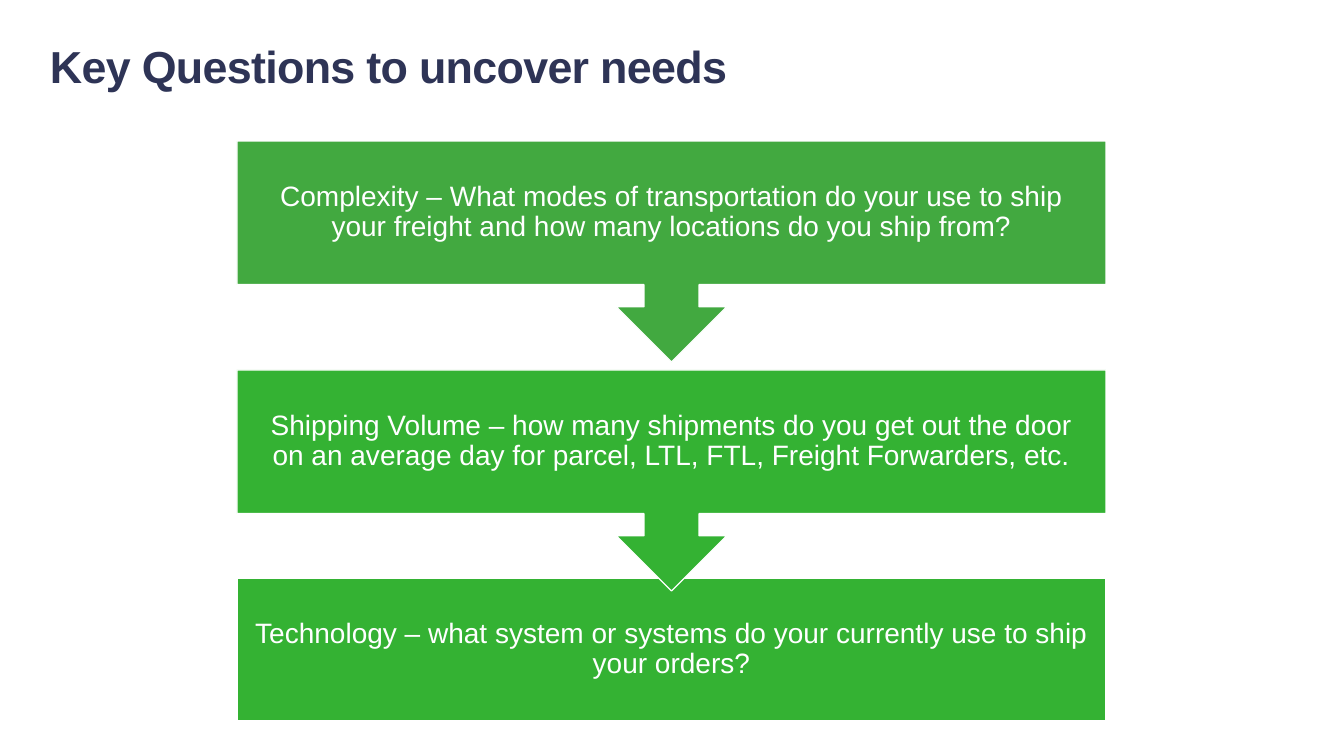
"""Builds a slide of three key questions stacked as a downward flow."""
from pptx import Presentation, util as u
from pptx.dml.color import RGBColor
from pptx.enum import shapes, text

TITLE = "Key Questions to uncover needs"
QUESTIONS = [
    ("Complexity – What modes of transportation do your use to ship your freight "
     "and how many locations do you ship from?", "first", 141),
    ("Shipping Volume – how many shipments do you get out the door on an average day "
     "for parcel, LTL, FTL, Freight Forwarders, etc.", "later", 370),
    ("Technology – what system or systems do your currently use to ship your orders?",
     "later", 578),
]
THEME = {
    "font": "Arial", "title": "2E3456", "first": "42A940", "later": "34B233",
    "white": "FFFFFF", "title_size": 32, "question_size": 20,
}
LEFT, WIDTH, PANEL_HEIGHT, CALLOUT_HEIGHT = 237, 869, 143, 221
PADDING = 16


def px(*lengths):
    return [u.Emu(round(length * 914400 / 100.8)) for length in lengths]


def color(name):
    return RGBColor.from_string(THEME[name])


def add_text(slide, box, wording, size, tint, insets):
    frame = slide.shapes.add_textbox(*px(*box)).text_frame
    frame.word_wrap = True
    frame.margin_left, frame.margin_top, frame.margin_right, frame.margin_bottom = px(*insets)
    paragraph = frame.paragraphs[0]
    paragraph.text = wording
    paragraph.font.name = THEME["font"]
    paragraph.font.size = u.Pt(THEME[size])
    paragraph.font.color.rgb = color(tint)
    return frame, paragraph


def add_title(slide):
    _, heading = add_text(slide, (50, 34, 1066, 78), TITLE, "title_size", "title", (0, 5, 0, 0))
    heading.font.bold = True
    heading.runs[0]._r.get_or_add_rPr().set("spc", "-50")


def add_question(slide, wording, tint, top, is_last):
    kind = shapes.MSO_SHAPE.RECTANGLE if is_last else shapes.MSO_SHAPE.UP_ARROW_CALLOUT
    height = PANEL_HEIGHT if is_last else CALLOUT_HEIGHT
    panel = slide.shapes.add_shape(kind, *px(LEFT, top, WIDTH, height))
    panel.rotation = 0 if is_last else 180
    panel.shadow.inherit = False
    panel.fill.solid()
    panel.fill.fore_color.rgb = color(tint)
    panel.line.color.rgb = color("white")
    panel.line.width = u.Pt(1)
    frame, question = add_text(slide, (LEFT, top, WIDTH, PANEL_HEIGHT), wording,
                               "question_size", "white", [PADDING] * 4)
    frame.vertical_anchor = text.MSO_ANCHOR.MIDDLE
    question.alignment = text.PP_ALIGN.CENTER
    question.line_spacing = 0.9


def main():
    deck = Presentation()
    deck.slide_width, deck.slide_height = px(1344, 756)
    slide = deck.slides.add_slide(deck.slide_layouts[6])
    add_title(slide)
    for entry in reversed(QUESTIONS):
        add_question(slide, *entry, is_last=entry is QUESTIONS[-1])
    deck.save("out.pptx")


if __name__ == "__main__":
    main()
